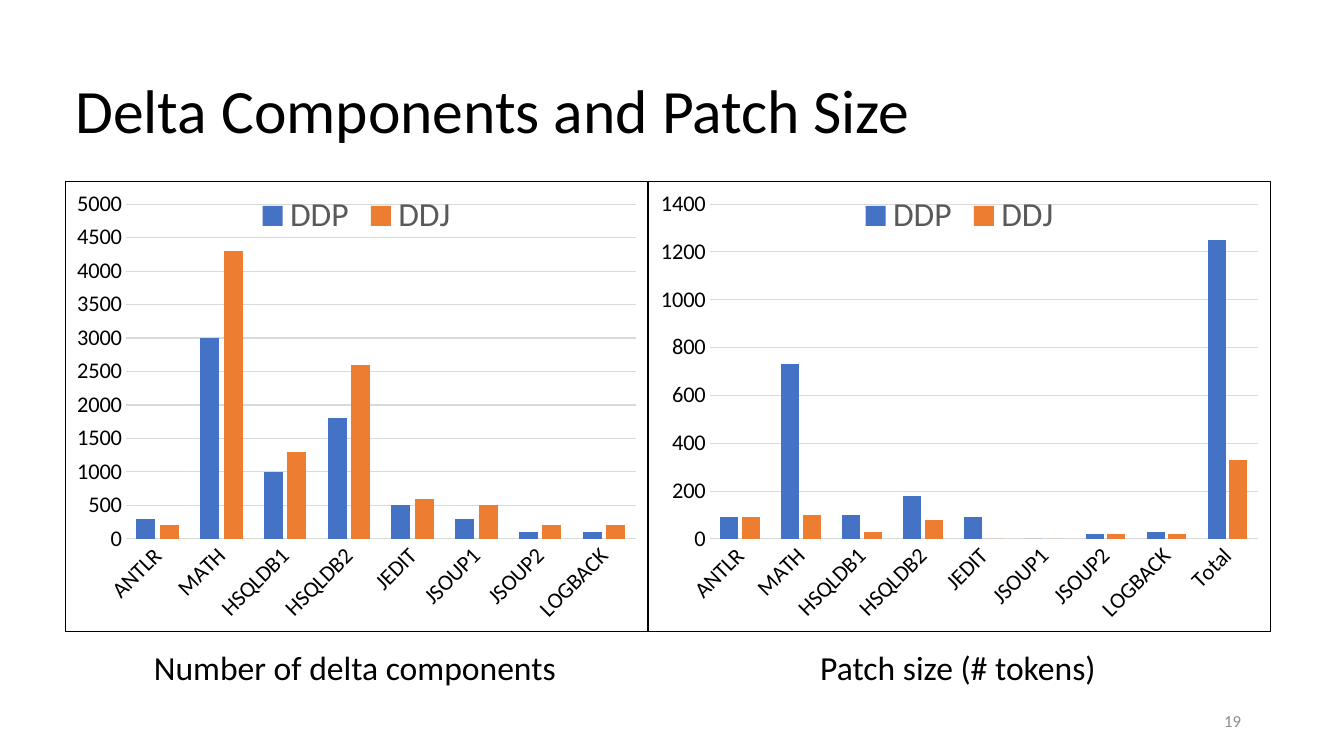
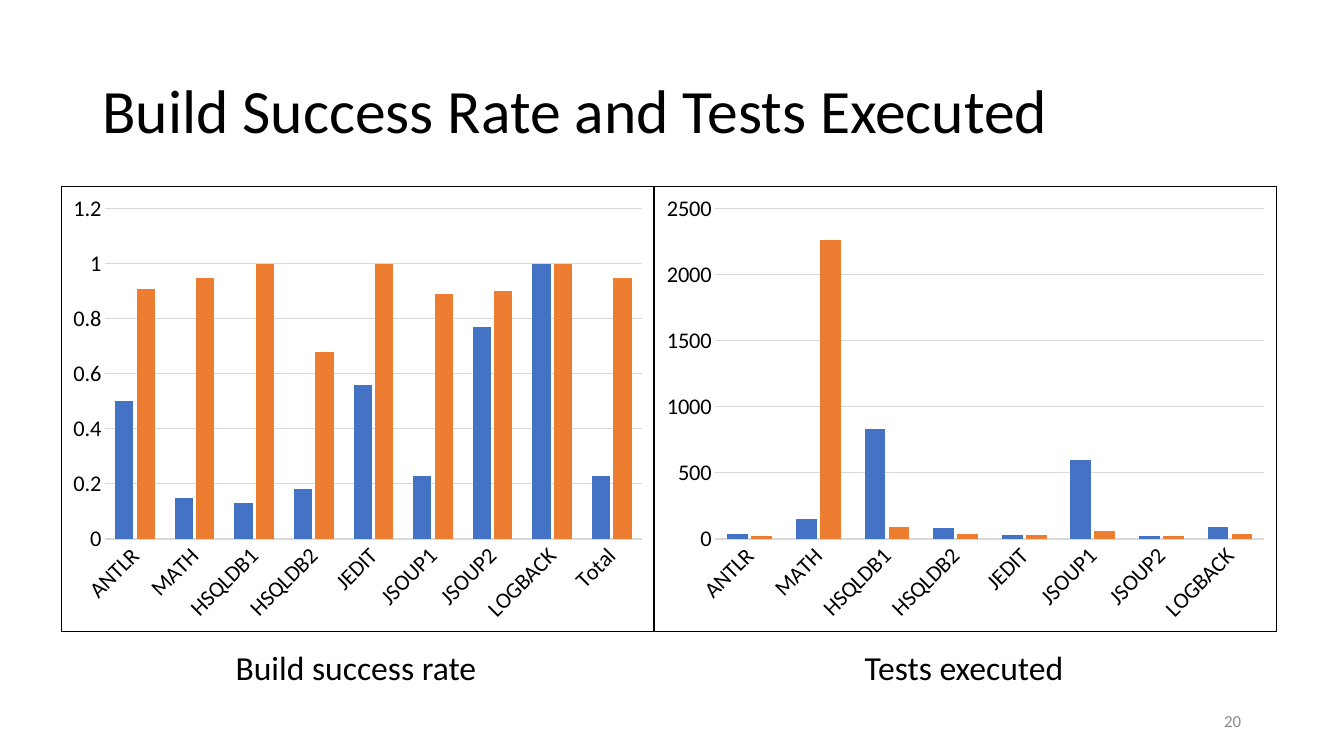
from dataclasses import dataclass

from lxml import etree
from pptx import Presentation
from pptx.chart.data import CategoryChartData
from pptx.dml.color import RGBColor
from pptx.enum.chart import XL_CHART_TYPE as ChartType
from pptx.enum.chart import XL_LEGEND_POSITION as LegendPosition
from pptx.enum.chart import XL_TICK_MARK as TickMark
from pptx.enum.text import MSO_ANCHOR as Anchor
from pptx.enum.text import PP_ALIGN as Align
from pptx.oxml import parse_xml
from pptx.oxml.ns import nsdecls, qn
from pptx.util import Cm, Pt

FONT = "Calibri"
COLORS = {
    "text": "000000",
    "frame": "000000",
    "background": "FFFFFF",
    "grid": "D9D9D9",
    "legend": "595959",
    "number": "8C8C8C",
    "DDP": "4472C4",
    "DDJ": "ED7D31",
}
PROJECTS = ["ANTLR", "MATH", "HSQLDB1", "HSQLDB2", "JEDIT", "JSOUP1", "JSOUP2", "LOGBACK"]
WITH_TOTAL = PROJECTS + ["Total"]
CHART_BOTTOM = 15.93
CAPTION_TOP = 16.18
CAPTION_SHIFT = -0.04


@dataclass
class Comparison:
    caption: str
    width: float
    projects: list
    ddp: list
    ddj: list
    gap: int
    overlap: int


def color(name):
    return RGBColor.from_string(COLORS[name])


def style_font(font, size, color_name="text"):
    font.name = FONT
    font.size = Pt(size)
    font.color.rgb = color(color_name)


def add_text(slide, text, box, size, color_name="text", align=Align.LEFT, anchor=Anchor.MIDDLE):
    frame = slide.shapes.add_textbox(*map(Cm, box)).text_frame
    frame.word_wrap = True
    frame.vertical_anchor = anchor
    frame.text = text
    paragraph = frame.paragraphs[0]
    paragraph.alignment = align
    style_font(paragraph.runs[0].font, size, color_name)
    return paragraph


def style_axis(axis):
    axis.major_tick_mark = TickMark.NONE
    axis.minor_tick_mark = TickMark.NONE
    style_font(axis.tick_labels.font, 16)


def style_line(line):
    line.color.rgb = color("grid")
    line.width = Pt(0.75)


def rotate_project_names(chart):
    labels = chart.element.find(f".//{qn('c:catAx')}/{qn('c:txPr')}/{qn('a:bodyPr')}")
    labels.set("rot", "-60000000")
    labels.set("vert", "horz")


def frame_chart(chart):
    border = parse_xml(f"<c:spPr {nsdecls('c', 'a')}/>")
    fill = etree.SubElement(border, qn("a:solidFill"))
    etree.SubElement(fill, qn("a:srgbClr"), val=COLORS["background"])
    line = etree.SubElement(border, qn("a:ln"), w=str(Pt(0.75)))
    stroke = etree.SubElement(line, qn("a:solidFill"))
    etree.SubElement(stroke, qn("a:srgbClr"), val=COLORS["frame"])
    chart.element.find(qn("c:txPr")).addprevious(border)


def add_legend(chart):
    chart.has_legend = True
    chart.legend.position = LegendPosition.TOP
    chart.legend.include_in_layout = True
    style_font(chart.legend.font, 24, "legend")


def add_comparison(slide, comparison, left, top, legend):
    data = CategoryChartData()
    data.categories = comparison.projects
    data.add_series("DDP", comparison.ddp)
    data.add_series("DDJ", comparison.ddj)
    box = map(Cm, (left, top, comparison.width, CHART_BOTTOM - top))
    chart = slide.shapes.add_chart(ChartType.COLUMN_CLUSTERED, *box, data).chart
    chart.has_title = False
    style_font(chart.font, 10)
    frame_chart(chart)

    style_axis(chart.category_axis)
    style_line(chart.category_axis.format.line)
    rotate_project_names(chart)
    style_axis(chart.value_axis)
    chart.value_axis.format.line.fill.background()
    style_line(chart.value_axis.major_gridlines.format.line)

    bars = chart.plots[0]
    bars.vary_by_categories = False
    bars.gap_width = comparison.gap
    bars.overlap = comparison.overlap
    for series in bars.series:
        series.format.fill.solid()
        series.format.fill.fore_color.rgb = color(series.name)

    chart.has_legend = False
    if legend:
        add_legend(chart)

    caption_box = (left + CAPTION_SHIFT, CAPTION_TOP, comparison.width, 1.27)
    add_text(slide, comparison.caption, caption_box, 24, align=Align.CENTER, anchor=Anchor.TOP)


def add_results_slide(deck, number, title, title_left, left, top, comparisons, legend):
    slide = deck.slides.add_slide(deck.slide_layouts[6])
    heading = add_text(slide, title, (title_left, 1.02, 30, 3.68), 44)
    heading.line_spacing = 0.9
    for comparison in comparisons:
        add_comparison(slide, comparison, left, top, legend)
        left += comparison.width
    add_text(slide, str(number), (23.91, 17.65, 7.62, 1.02), 12, "number", Align.RIGHT)


def main():
    deck = Presentation()
    deck.slide_width = Cm(33.87)
    deck.slide_height = Cm(19.05)

    sizes = [
        Comparison(
            "Number of delta components", 14.69, PROJECTS,
            [300, 3000, 1000, 1800, 500, 300, 100, 100],
            [200, 4300, 1300, 2600, 600, 500, 200, 200],
            gap=112, overlap=-24,
        ),
        Comparison(
            "Patch size (# tokens)", 15.7, WITH_TOTAL,
            [90, 730, 100, 180, 90, 0, 20, 30, 1250],
            [90, 100, 30, 80, 0, 0, 20, 20, 330],
            gap=119, overlap=-20,
        ),
    ]
    builds = [
        Comparison(
            "Build success rate", 14.94, WITH_TOTAL,
            [0.5, 0.15, 0.13, 0.18, 0.56, 0.23, 0.77, 1, 0.23],
            [0.91, 0.95, 1, 0.68, 1, 0.89, 0.9, 1, 0.95],
            gap=111, overlap=-18,
        ),
        Comparison(
            "Tests executed", 15.71, PROJECTS,
            [40, 150, 830, 80, 30, 600, 20, 90],
            [20, 2260, 90, 40, 30, 60, 20, 40],
            gap=116, overlap=-16,
        ),
    ]
    add_results_slide(
        deck, 19, "Delta Components and Patch Size",
        title_left=1.65, left=1.64, top=4.56, comparisons=sizes, legend=True,
    )
    add_results_slide(
        deck, 20, "Build Success Rate and Tests Executed",
        title_left=2.33, left=1.54, top=4.68, comparisons=builds, legend=False,
    )
    deck.save("out.pptx")


if __name__ == "__main__":
    main()
